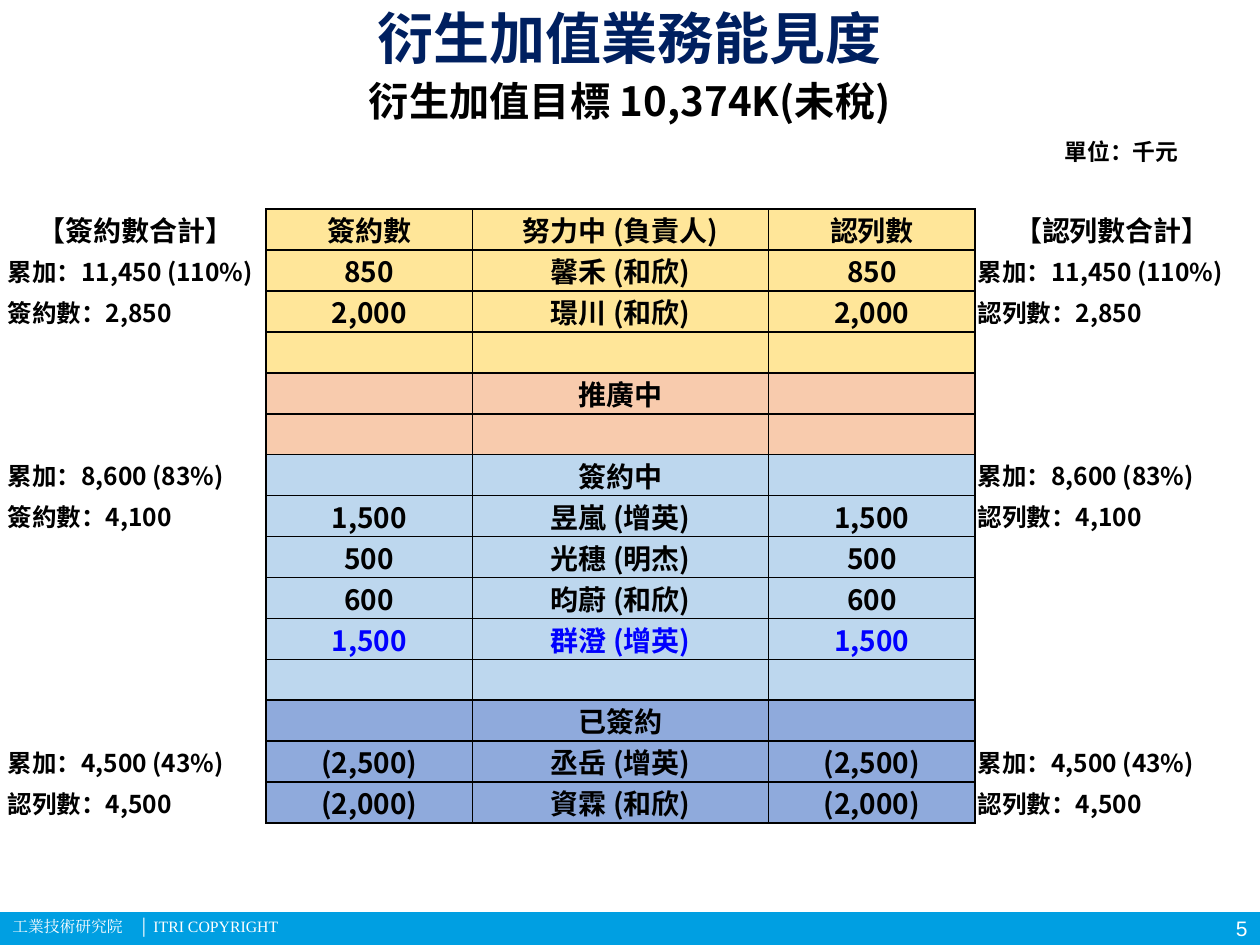
"""Build the slide on the pipeline of derived value-added business."""
import dataclasses

import lxml.etree
import pptx
import pptx.dml.color
import pptx.enum.shapes
import pptx.enum.text
import pptx.oxml.ns
import pptx.util

Pt = pptx.util.Pt
ALIGN = pptx.enum.text.PP_ALIGN


@dataclasses.dataclass(frozen=True)
class Theme:
    sans: str = "Noto Sans CJK TC"
    heading: str = "Noto Sans CJK SC"
    number: str = "Arial"
    footer: str = "Times New Roman"
    navy: str = "002060"
    black: str = "000000"
    white: str = "FFFFFF"
    blue: str = "0000FF"
    bar: str = "009FE2"
    working: str = "FFE699"
    promoting: str = "F8CBAD"
    signing: str = "BDD7EE"
    signed: str = "8FAADC"
    title_size: float = 32
    subtitle_size: float = 23
    table_size: float = 16
    total_size: float = 14
    unit_size: float = 13
    page_size: float = 12
    footer_size: float = 9


THEME = Theme()


def color(value):
    return pptx.dml.color.RGBColor.from_string(value)


def add_element(parent, tag, **attributes):
    return lxml.etree.SubElement(parent, pptx.oxml.ns.qn(tag), attributes)


class SlideBuilder:
    def __init__(self, theme, slide):
        self.theme = theme
        self.slide = slide

    def fill_paragraph(self, paragraph, text, size, ink, face, bold=True, align=ALIGN.CENTER):
        paragraph.text = text
        paragraph.alignment = align
        font = paragraph.font
        font.size, font.bold, font.name = Pt(size), bold, face
        font.color.rgb = color(ink)
        properties = paragraph._p.pPr.find(pptx.oxml.ns.qn("a:defRPr"))
        add_element(properties, "a:ea", typeface=face)

    def bar(self, left, top, width, height, fill):
        shape = self.slide.shapes.add_shape(
            pptx.enum.shapes.MSO_SHAPE.RECTANGLE, Pt(left), Pt(top), Pt(width), Pt(height))
        shape.shadow.inherit = False
        shape.fill.solid()
        shape.fill.fore_color.rgb = color(fill)
        shape.line.fill.background()

    def text(self, box, text, size, ink, face, bold=True, align=ALIGN.CENTER, tab=None):
        shape = self.slide.shapes.add_textbox(*map(Pt, box))
        frame = shape.text_frame
        frame.word_wrap = True
        frame.margin_top = frame.margin_bottom = 0
        frame.vertical_anchor = pptx.enum.text.MSO_ANCHOR.MIDDLE
        paragraph = frame.paragraphs[0]
        if tab:
            tabs = add_element(paragraph._p.get_or_add_pPr(), "a:tabLst")
            add_element(tabs, "a:tab", pos=str(Pt(tab)), algn="l")
        self.fill_paragraph(paragraph, text, size, ink, face, bold, align)

    def borders(self, cell, sides):
        properties = cell._tc.get_or_add_tcPr()
        for side in "LRTB":
            line = add_element(properties, f"a:ln{side}", w=str(Pt(1)))
            if side in sides:
                fill = add_element(line, "a:solidFill")
                add_element(fill, "a:srgbClr", val=self.theme.black)
            else:
                add_element(line, "a:noFill")

    def table(self, left, top, widths, row_height, rows):
        table = self.slide.shapes.add_table(
            len(rows), len(widths), Pt(left), Pt(top),
            Pt(sum(widths)), Pt(row_height * len(rows))).table
        table.first_row = table.horz_banding = False
        for column, width in zip(table.columns, widths):
            column.width = Pt(width)
        outer_sides = {0: "R", len(widths) - 1: "L"}
        for row_index, (fill, ink, values) in enumerate(rows):
            table.rows[row_index].height = Pt(row_height)
            for column_index, value in enumerate(values):
                cell = table.cell(row_index, column_index)
                outer = column_index in outer_sides
                total = outer and row_index > 0
                self.borders(cell, outer_sides.get(column_index, "LRTB"))
                cell.fill.solid()
                cell.fill.fore_color.rgb = color(self.theme.white if outer else fill)
                cell.margin_left = cell.margin_right = Pt(1.44)
                cell.margin_top = cell.margin_bottom = 0
                cell.vertical_anchor = pptx.enum.text.MSO_ANCHOR.MIDDLE
                self.fill_paragraph(
                    cell.text_frame.paragraphs[0], value,
                    self.theme.total_size if total else self.theme.table_size,
                    self.theme.black if outer else ink, self.theme.sans,
                    align=ALIGN.LEFT if total else ALIGN.CENTER)


def pipeline_rows(theme):
    def row(fill, name="", amount="", left="", right="", ink=theme.black):
        return fill, ink, (left, amount, name, amount, right)

    def cumulative(value):
        return {"left": f"累加：{value}", "right": f"累加：{value}"}

    def subtotal(value, label="簽約數"):
        return {"left": f"{label}：{value}", "right": f"認列數：{value}"}

    heading = ("【簽約數合計】", "簽約數", "努力中 (負責人)", "認列數", "【認列數合計】")
    return [
        (theme.working, theme.black, heading),
        row(theme.working, "馨禾 (和欣)", "850", **cumulative("11,450 (110%)")),
        row(theme.working, "璟川 (和欣)", "2,000", **subtotal("2,850")),
        row(theme.working),
        row(theme.promoting, "推廣中"),
        row(theme.promoting),
        row(theme.signing, "簽約中", **cumulative("8,600 (83%)")),
        row(theme.signing, "昱嵐 (增英)", "1,500", **subtotal("4,100")),
        row(theme.signing, "光穗 (明杰)", "500"),
        row(theme.signing, "昀蔚 (和欣)", "600"),
        row(theme.signing, "群澄 (增英)", "1,500", ink=theme.blue),
        row(theme.signing),
        row(theme.signed, "已簽約"),
        row(theme.signed, "丞岳 (增英)", "(2,500)", **cumulative("4,500 (43%)")),
        row(theme.signed, "資霖 (和欣)", "(2,000)", **subtotal("4,500", "認列數")),
    ]


def main():
    presentation = pptx.Presentation()
    presentation.slide_width, presentation.slide_height = Pt(720), Pt(540)
    slide = presentation.slides.add_slide(presentation.slide_layouts[6])
    theme = THEME
    builder = SlideBuilder(theme, slide)
    builder.bar(0, 521.3, 720, 18.7, theme.bar)
    builder.text((678.2, 521.3, 41.8, 18.7), "5", theme.page_size, theme.white,
                 theme.number, bold=False, align=ALIGN.RIGHT)
    builder.text((0, 515, 643.7, 28.8), "工業技術研究院\t│ ITRI COPYRIGHT",
                 theme.footer_size, theme.white, theme.footer, bold=False,
                 align=ALIGN.LEFT, tab=72)
    builder.text((33.8, 0, 652.3, 42.5), "衍生加值業務能見度",
                 theme.title_size, theme.navy, theme.heading)
    builder.text((33.8, 39.6, 652.3, 35.3), "衍生加值目標 10,374K(未稅)",
                 theme.subtitle_size, theme.black, theme.sans)
    builder.text((598.3, 76.3, 85, 20.2), "單位：千元",
                 theme.unit_size, theme.black, theme.heading)
    builder.table(2.9, 119.5, (149, 118.1, 169.2, 118.1, 156.2), 23.4,
                  pipeline_rows(theme))
    presentation.save("out.pptx")


if __name__ == "__main__":
    main()
